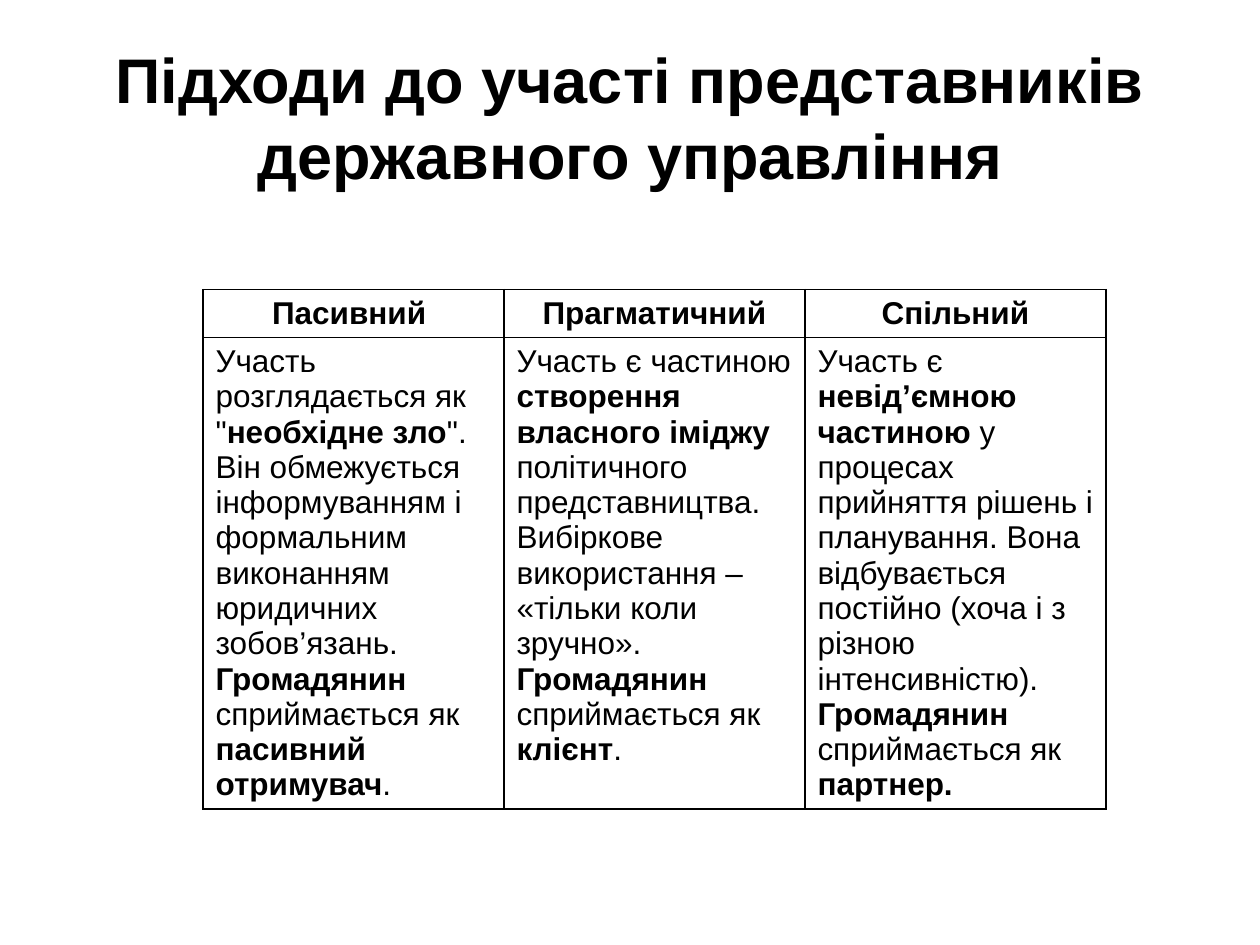
from lxml.etree import SubElement
from pptx import Presentation
from pptx.dml.color import RGBColor
from pptx.enum.text import MSO_ANCHOR, PP_ALIGN
from pptx.oxml.ns import qn
from pptx.util import Pt

COLORS = {"text": "000000", "border": "000000", "background": "FFFFFF"}
TITLE_FORMAT = {"name": "Arial", "size": Pt(36), "bold": True}
HEADER_FORMAT = {"name": "Arial", "size": Pt(18), "bold": True}
BODY_FORMAT = {"name": "Arial", "size": Pt(18), "bold": False}

APPROACHES = {
    "Пасивний ": [
        "Участь розглядається як \"*необхідне зло*\". Він обмежується інформуванням "
        "і формальним виконанням юридичних зобов’язань.\n*Громадянин *"
        "сприймається як *пасивний отримувач*.",
    ],
    "Прагматичний": [
        "Участь є частиною *створення власного іміджу *політичного "
        "представництва. Вибіркове використання – «тільки коли зручно».",
        "*Громадянин *сприймається як *клієнт*.",
    ],
    "Спільний": [
        "Участь є *невід’ємною частиною *у процесах прийняття рішень і планування. "
        "Вона відбувається постійно (хоча і з різною інтенсивністю).\n"
        "*Громадянин *сприймається як *партнер.*",
    ],
}


def add_span(para, text, formats):
    span = para.add_run()
    span.text = text
    for name, value in formats.items():
        setattr(span.font, name, value)
    span.font.color.rgb = RGBColor.from_string(COLORS["text"])


def style_cell(cell):
    properties = cell._tc.get_or_add_tcPr()
    for side in ("a:lnL", "a:lnR", "a:lnT", "a:lnB"):
        line = SubElement(properties, qn(side), w=str(Pt(1)))
        fill = SubElement(line, qn("a:solidFill"))
        SubElement(fill, qn("a:srgbClr"), val=COLORS["border"])
    cell.fill.background()


deck = Presentation()
deck.slide_width, deck.slide_height = Pt(720), Pt(540)
page = deck.slides.add_slide(deck.slide_layouts[5])
page.background.fill.solid()
page.background.fill.fore_color.rgb = RGBColor.from_string(COLORS["background"])

title = page.shapes.title
title_place = {"left": Pt(36), "top": Pt(21.6), "width": Pt(648), "height": Pt(90)}
for name, value in title_place.items():
    setattr(title, name, value)
title.text_frame.vertical_anchor = MSO_ANCHOR.MIDDLE
title_para = title.text_frame.paragraphs[0]
title_para.alignment = PP_ALIGN.CENTER
add_span(title_para, "Підходи до участі представників державного управління", TITLE_FORMAT)

frame = page.shapes.add_table(2, len(APPROACHES), Pt(116), Pt(165.5), Pt(516), Pt(296.5))
table = frame.table
table.first_row = table.horz_banding = False
table.rows[0].height, table.rows[1].height = Pt(27.5), Pt(269)

for column, (heading, paragraphs) in enumerate(APPROACHES.items()):
    table.columns[column].width = Pt(172)
    header, body = table.cell(0, column), table.cell(1, column)
    style_cell(header)
    style_cell(body)

    header_para = header.text_frame.paragraphs[0]
    header_para.alignment = PP_ALIGN.CENTER
    add_span(header_para, heading, HEADER_FORMAT)

    for index, text in enumerate(paragraphs):
        para = body.text_frame.add_paragraph() if index else body.text_frame.paragraphs[0]
        for line_number, line in enumerate(text.split("\n")):
            if line_number:
                para.add_line_break()
            for position, words in enumerate(line.split("*")):
                if words:
                    add_span(para, words, {**BODY_FORMAT, "bold": position % 2 == 1})

deck.save("out.pptx")
